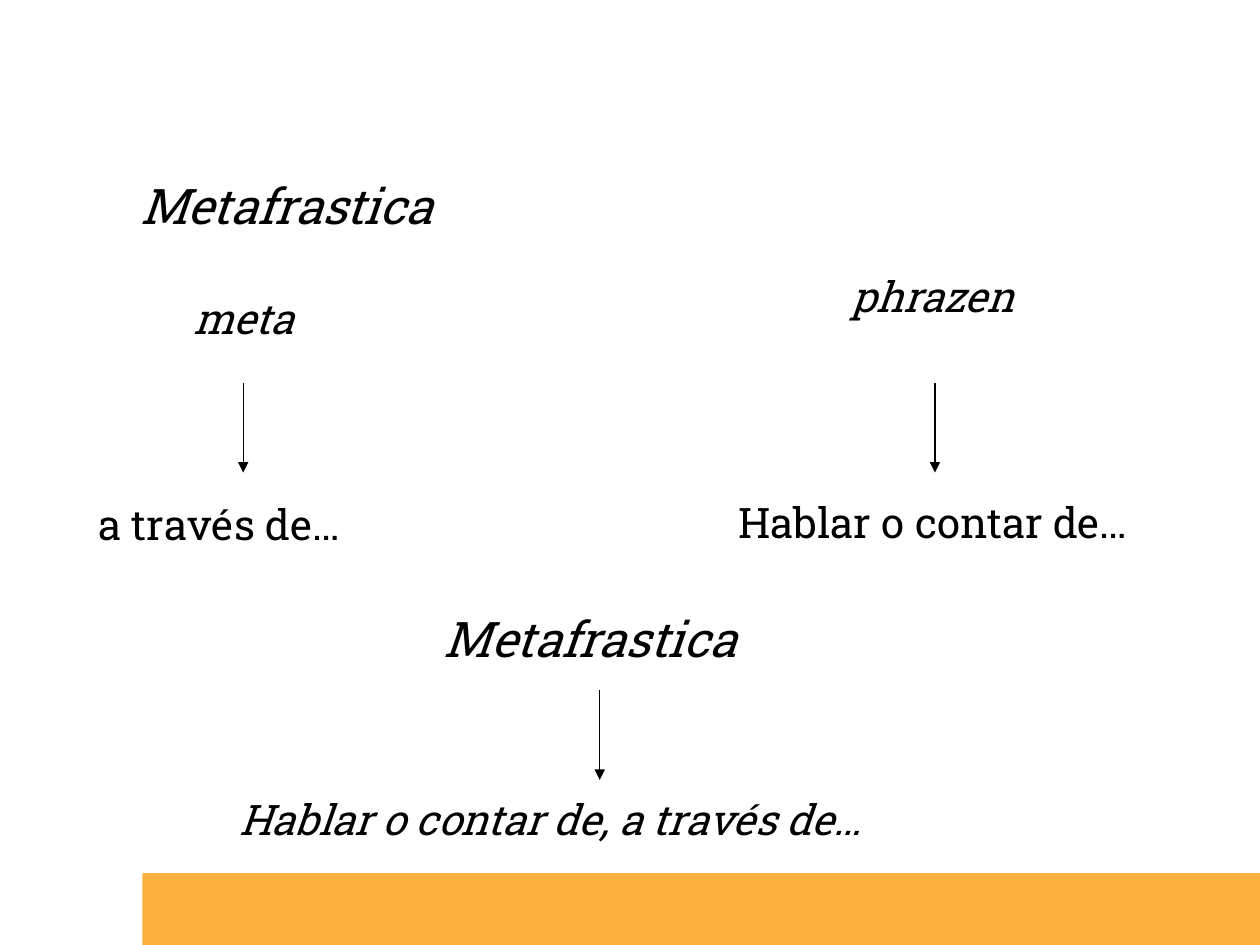
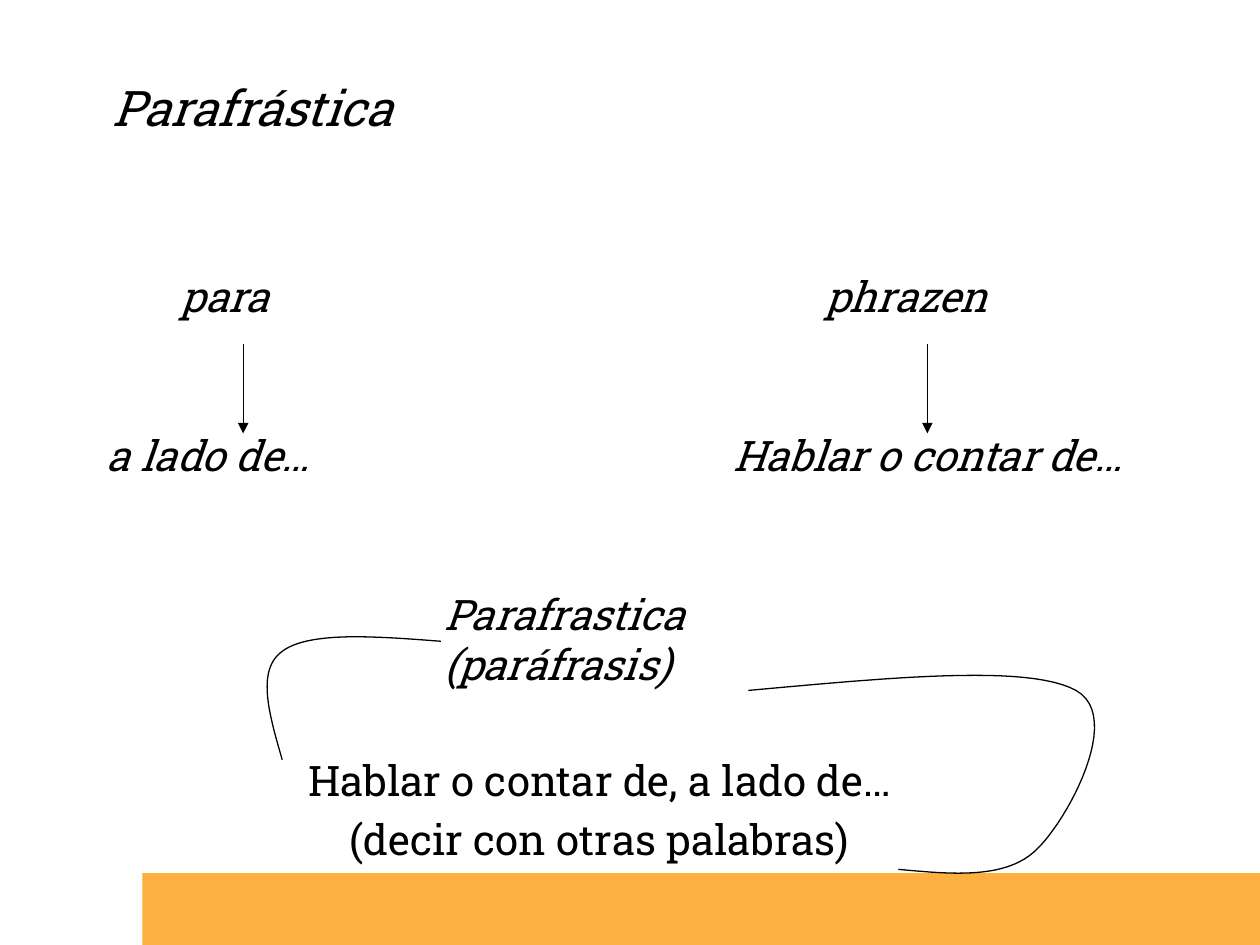
from lxml.etree import SubElement
from pptx import Presentation
from pptx.dml.color import RGBColor
from pptx.enum.shapes import MSO_CONNECTOR as Line, MSO_SHAPE as Shape
from pptx.enum.text import MSO_ANCHOR as Anchor, MSO_AUTO_SIZE as Fit, PP_ALIGN as Align
from pptx.oxml.ns import qn
from pptx.util import Inches, Pt

FONT = "Roboto Slab"
INK, BAND, GREY = "000000", "FBB040", "323232"
WIDE, HIGH = 10, 7.5
DROP = 0.71
STEPS = 24


def tint(color, code):
    color.rgb = RGBColor.from_string(code)


def place(shape, box):
    shape.left, shape.top, shape.width, shape.height = map(Inches, box)


def add_run(para, text, size, italic, font=FONT, code=INK):
    run = para.add_run()
    run.text = text
    run.font.name, run.font.size, run.font.italic = font, Pt(size), italic
    tint(run.font.color, code)


def write(shape, box, lines, size=24, italic=True, align=Align.CENTER,
          gap=4.8, anchor=Anchor.TOP):
    """Place a text holder and fill it, one plain paragraph a line."""
    place(shape, box)
    frame = shape.text_frame
    frame.word_wrap, frame.auto_size = True, Fit.NONE
    frame.vertical_anchor = anchor
    for i, line in enumerate(lines):
        para = frame.add_paragraph() if i else frame.paragraphs[0]
        para.alignment, para.space_before = align, Pt(gap)
        props = para._p.get_or_add_pPr()
        props.set("marL", "0")
        props.set("indent", "0")
        SubElement(props, qn("a:buNone"))
        add_run(para, line, size, italic)
    return frame


def add_text(slide, box, *lines, **style):
    holder = slide.shapes.add_textbox(*map(Inches, box))
    return write(holder, box, lines, **style)


def head(shape, box, text, tail=False):
    """Write a heading; tail adds the large space that shifts it left."""
    frame = write(shape, box, [text], size=28, gap=0, anchor=Anchor.MIDDLE)
    if tail:
        add_run(frame.paragraphs[0], " ", 40, False, "Arial", GREY)


def add_arrow(slide, x, y):
    ends = map(Inches, (x, y, x, y + DROP))
    arrow = slide.shapes.add_connector(Line.STRAIGHT, *ends)
    tint(arrow.line.color, INK)
    arrow.line.width = Pt(0.75)
    SubElement(arrow.line._get_or_add_ln(), qn("a:tailEnd"), type="triangle")
    SubElement(arrow._element.spPr, qn("a:effectLst"))


def bend(points):
    """Yield points along joined cubic curves."""
    for i in range(0, len(points) - 1, 3):
        for step in range(1, STEPS + 1):
            t = step / STEPS
            parts = ((1 - t) ** 3, 3 * t * (1 - t) ** 2, 3 * t * t * (1 - t), t ** 3)
            yield tuple(Inches(sum(p * pt[axis] for p, pt in zip(parts, points[i:i + 4])))
                        for axis in (0, 1))


def add_curve(slide, points):
    path = slide.shapes.build_freeform(*map(Inches, points[0]))
    path.add_line_segments(list(bend(points)), close=False)
    curve = path.convert_to_shape()
    curve.shadow.inherit = False
    curve.fill.background()
    tint(curve.line.color, INK)
    curve.line.width = Pt(0.75)


def add_slide(deck):
    """Add a slide with the band; return it with its title and body."""
    slide = deck.slides.add_slide(deck.slide_layouts[1])
    left, top = 1.13, 6.93
    band = slide.shapes.add_shape(
        Shape.RECTANGLE, *map(Inches, (left, top, WIDE - left, HIGH - top)))
    band.shadow.inherit = False
    band.fill.solid()
    tint(band.fill.fore_color, BAND)
    band.line.fill.background()
    return slide, slide.shapes.title, slide.placeholders[1]


def meta_slide(deck):
    slide, title, body = add_slide(deck)
    head(title, (0.39, 1.17, 3.92, 0.78), "Metafrastica", tail=True)
    write(body, (0.9, 2.27, 2.07, 0.64), ["meta"])
    add_text(slide, (0.68, 3.91, 2.6, 0.51), "a través de…",
             italic=False, align=Align.LEFT)
    add_text(slide, (6.21, 2.1, 2.39, 0.64), "phrazen")
    add_text(slide, (5.28, 3.89, 4.25, 0.51), "Hablar o contar de…", italic=False)
    add_text(slide, (1.8, 6.25, 5.98, 0.51), "Hablar o contar de, a través de…",
             align=Align.LEFT)
    for x, y in ((1.93, 3.04), (7.42, 3.04), (4.76, 5.48)):
        add_arrow(slide, x, y)
    box = (2.8, 4.61, 3.92, 0.78)
    head(slide.shapes.add_textbox(*map(Inches, box)), box, "Metafrastica", tail=True)


def para_slide(deck):
    slide, title, body = add_slide(deck)
    head(title, (0, 0.47, 4.01, 0.76), "Parafrástica")
    write(body, (0.75, 2.1, 2.07, 0.64), ["para"])
    add_text(slide, (0.75, 3.36, 2.28, 0.51), "a lado de…", align=Align.LEFT)
    add_text(slide, (6, 2.1, 2.39, 0.64), "phrazen")
    add_text(slide, (5.24, 3.36, 4.25, 0.51), "Hablar o contar de…")
    for x in (1.93, 7.36):
        add_arrow(slide, x, 2.73)
    add_text(slide, (3.43, 4.62, 2.17, 0.91), "Parafrastica", "(paráfrasis)",
             align=Align.LEFT, gap=0)
    add_text(slide, (1.77, 5.94, 5.98, 0.99), "Hablar o contar de, a lado de…",
             "(decir con otras palabras)", italic=False)
    add_curve(slide, [(3.5, 5.09), (2.98, 5.05), (2.45, 5.01), (2.24, 5.17),
                      (2.03, 5.32), (2.14, 5.68), (2.24, 6.03)])
    add_curve(slide, [(5.94, 5.48), (7.05, 5.38), (8.16, 5.27), (8.54, 5.48),
                      (8.92, 5.69), (8.47, 6.51), (8.23, 6.74),
                      (7.99, 6.98), (7.56, 6.94), (7.13, 6.9)])


def main():
    deck = Presentation()
    deck.slide_width, deck.slide_height = Inches(WIDE), Inches(HIGH)
    meta_slide(deck)
    para_slide(deck)
    deck.save("out.pptx")


if __name__ == "__main__":
    main()
